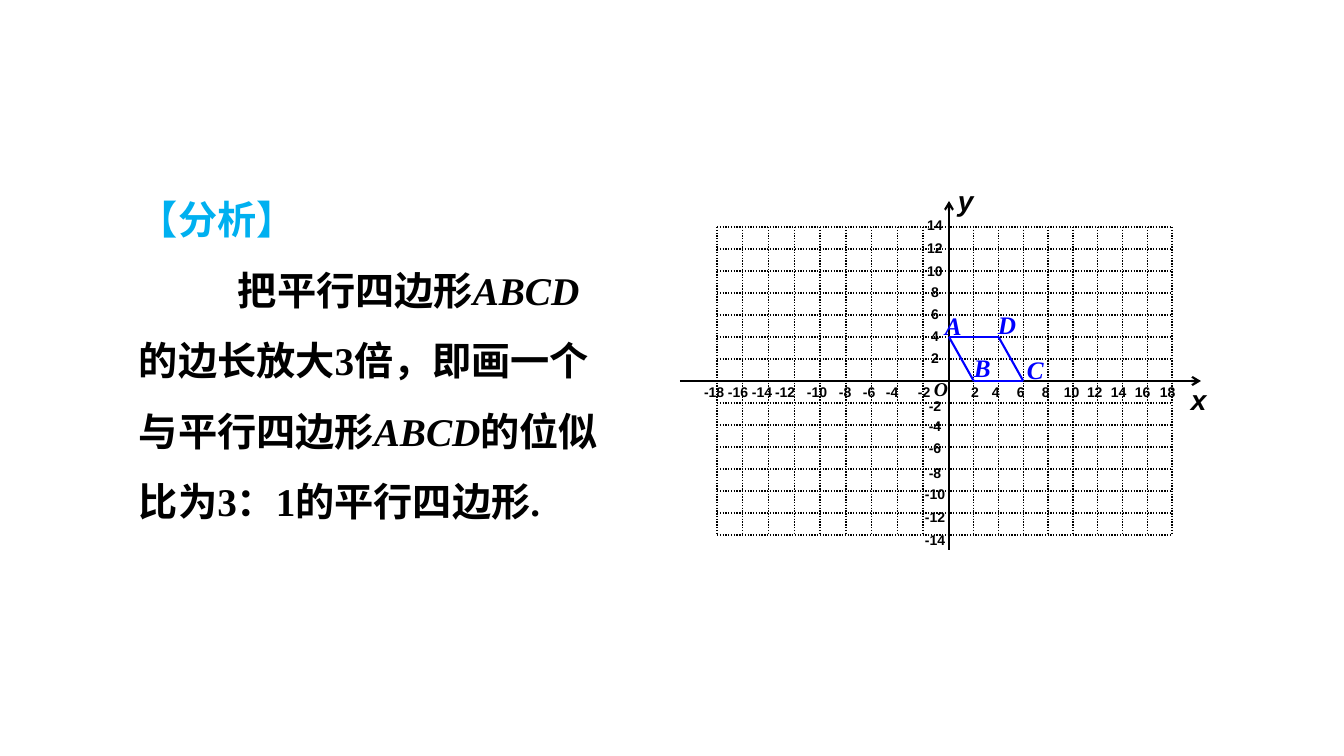
from collections import namedtuple
from dataclasses import dataclass

from lxml.etree import SubElement
from pptx import Presentation
from pptx.dml.color import RGBColor
from pptx.enum.dml import MSO_LINE
from pptx.enum.shapes import MSO_CONNECTOR
from pptx.enum.text import PP_ALIGN
from pptx.oxml.ns import qn
from pptx.util import Pt

PX = 914400 / 100.8
Box = namedtuple("Box", "left top width height")
Style = namedtuple("Style", "font size color italic")


@dataclass(frozen=True)
class Theme:
    black: str = "000000"
    blue: str = "0000FF"
    cyan: str = "00B0F0"
    chinese: str = "Noto Sans CJK SC"
    serif: str = "Times New Roman"
    sans: str = "Arial"
    body_size: int = 28
    axis_size: int = 20
    vertex_size: int = 18
    origin_size: int = 14
    tick_size: int = 10
    line_height: float = 50.4
    axis_width: float = 1.5
    grid_width: float = 1


THEME = Theme()
HEADING = Style(THEME.chinese, THEME.body_size, THEME.cyan, False)
BODY = Style(THEME.serif, THEME.body_size, THEME.black, False)
BODY_ITALIC = BODY._replace(italic=True)
TICK = Style(THEME.sans, THEME.tick_size, THEME.black, False)
AXIS_NAME = Style(THEME.sans, THEME.axis_size, THEME.black, True)
VERTEX = Style(THEME.serif, THEME.vertex_size, THEME.blue, True)
ORIGIN = Style(THEME.serif, THEME.origin_size, THEME.black, True)

ANALYSIS = [
    (0, [("【分析】", HEADING)]),
    (99, [("把平行四边形", BODY), ("ABCD", BODY_ITALIC)]),
    (0, [("的边长放大3倍，即画一个", BODY)]),
    (0, [("与平行四边形", BODY), ("ABCD", BODY_ITALIC), ("的位似", BODY)]),
    (0, [("比为3：1的平行四边形.", BODY)]),
]
HANGING = 178

TICKS_X = [*range(-18, 0, 2), *range(2, 19, 2)]
TICK_LEFTS = [24, 48, 72, 95, 127, 159, 183, 206, 238,
              291, 312, 337, 362, 384, 407, 431, 455, 480]
TICKS_Y = [*range(14, 0, -2), *range(-2, -15, -2)]
TICK_TOPS = [16, 39, 62, 83, 105, 127, 149,
             197, 217, 239, 264, 285, 308, 331]
VERTICES = [(0, 4), (2, 0), (6, 0), (4, 4)]
LETTERS = [
    ("A", 265, 109, VERTEX),
    ("B", 294, 151, VERTEX),
    ("C", 347, 153, VERTEX),
    ("D", 318, 108, VERTEX),
    ("O", 254, 176, ORIGIN),
    ("y", 278, -18, AXIS_NAME),
    ("x", 511, 181, AXIS_NAME),
]


def emu(length):
    return round(length * PX)


def add_text_box(slide, box):
    shape = slide.shapes.add_textbox(*map(emu, box))
    frame = shape.text_frame
    frame.word_wrap = True
    frame.margin_left = frame.margin_right = 0
    frame.margin_top = frame.margin_bottom = 0
    return frame


def format_run(run, style):
    run.font.name = style.font
    run.font.size = Pt(style.size)
    run.font.bold = True
    run.font.italic = style.italic
    run.font.color.rgb = RGBColor.from_string(style.color)


def add_label(slide, text, box, style, alignment=PP_ALIGN.LEFT):
    paragraph = add_text_box(slide, box).paragraphs[0]
    paragraph.text = text
    paragraph.alignment = alignment
    format_run(paragraph.runs[0], style)


def add_line(slide, start, end, color, width, dotted=False, arrow=False):
    connector = slide.shapes.add_connector(
        MSO_CONNECTOR.STRAIGHT, *map(emu, (*start, *end)))
    connector.line.color.rgb = RGBColor.from_string(color)
    connector.line.width = Pt(width)
    if dotted:
        connector.line.dash_style = MSO_LINE.ROUND_DOT
    properties = connector._element.spPr
    if arrow:
        SubElement(properties.find(qn("a:ln")), qn("a:tailEnd"), type="arrow")
    SubElement(properties, qn("a:effectLst"))


def draw_analysis(slide, box):
    frame = add_text_box(slide, box)
    frame.margin_left = frame.margin_right = emu(13)
    frame.margin_top = frame.margin_bottom = emu(7)
    for index, (indent, pieces) in enumerate(ANALYSIS):
        paragraph = frame.add_paragraph() if index else frame.paragraphs[0]
        paragraph.line_spacing = Pt(THEME.line_height)
        properties = paragraph._p.get_or_add_pPr()
        properties.set("marL", str(emu(HANGING)))
        properties.set("indent", str(emu(indent - HANGING)))
        for text, style in pieces:
            run = paragraph.add_run()
            run.text = text
            format_run(run, style)
            SubElement(run._r.get_or_add_rPr(), qn("a:ea"), typeface=THEME.chinese)


def draw_plane(slide, box):
    origin_x, origin_y = box.left + 269, box.top + 180
    grid_left, grid_right = origin_x - 232, origin_x + 223

    def locate(x, y):
        reach = grid_right - origin_x if x > 0 else origin_x - grid_left
        return origin_x + x * reach / 18, origin_y - y * 11

    for x in TICKS_X:
        add_line(slide, locate(x, 14), locate(x, -14),
                 THEME.black, THEME.grid_width, dotted=True)
    for y in TICKS_Y:
        add_line(slide, locate(-18, y), locate(18, y),
                 THEME.black, THEME.grid_width, dotted=True)
    add_line(slide, (box.left, origin_y), (box.left + box.width, origin_y),
             THEME.black, THEME.axis_width, arrow=True)
    add_line(slide, (origin_x, box.top + box.height), (origin_x, box.top),
             THEME.black, THEME.axis_width, arrow=True)
    for start, end in zip(VERTICES, VERTICES[1:] + VERTICES[:1]):
        add_line(slide, locate(*start), locate(*end), THEME.blue, THEME.axis_width)

    for value, left in zip(TICKS_X, TICK_LEFTS):
        add_label(slide, str(value),
                  Box(box.left + left, box.top + 183, 24, 17), TICK)
    for value, top in zip(TICKS_Y, TICK_TOPS):
        add_label(slide, str(value), Box(origin_x - 26, box.top + top, 24, 17),
                  TICK, PP_ALIGN.CENTER)
    for text, left, top, style in LETTERS:
        add_label(slide, text,
                  Box(box.left + left, box.top + top, 25, 34), style)


def main():
    presentation = Presentation()
    presentation.slide_width = emu(1344)
    presentation.slide_height = emu(756)
    slide = presentation.slides.add_slide(presentation.slide_layouts[6])
    draw_analysis(slide, Box(126, 165, 1036, 361))
    draw_plane(slide, Box(680, 201, 521, 349))
    presentation.save("out.pptx")


if __name__ == "__main__":
    main()
